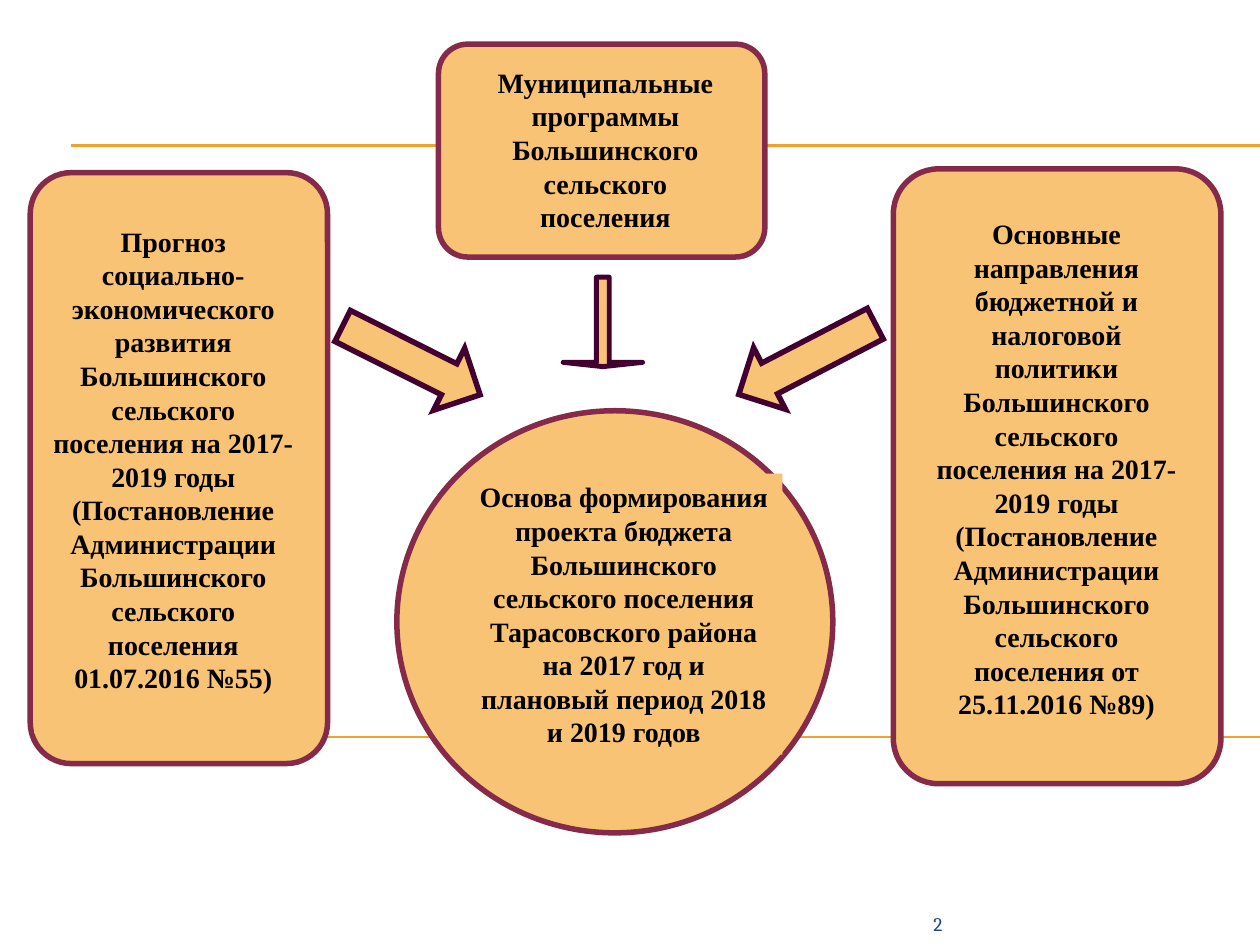
import pptx
import pptx.dml.color
import pptx.enum.shapes
import pptx.enum.text
import pptx.oxml.ns
import pptx.util
from lxml import etree

Inches, Pt = pptx.util.Inches, pptx.util.Pt
KIND = pptx.enum.shapes.MSO_SHAPE
ALIGN = pptx.enum.text.PP_ALIGN
ANCHOR = pptx.enum.text.MSO_ANCHOR

SAND, PLUM, DARK_PLUM, GOLD = "F8C374", "862A4A", "420031", "F0A22E"

# Content: frame kind, frame box, text box (left, top, width, height), paragraphs
BUDGET_BASIS = (KIND.OVAL, (3.15, 3.26, 3.46, 3.35), (3.69, 3.76, 2.52, 2.23), [
    "Основа формирования",
    "проекта бюджета Большинского сельского поселения",
    "Тарасовского района на 2017 год и плановый период 2018 и 2019 годов",
])
FORECAST = (KIND.ROUNDED_RECTANGLE, (0.24, 1.37, 2.36, 4.69), (0.27, 1.73, 2.21, 4.09), [
    "Прогноз",
    "социально-",
    "экономического",
    "развития",
    "Большинского сельского поселения на 2017-2019 годы",
    "(Постановление Администрации Большинского сельского поселения 01.07.2016 №55)",
])
PROGRAMMES = (KIND.ROUNDED_RECTANGLE, (3.48, 0.35, 2.59, 1.69), (3.7, 0.47, 2.21, 1.43), [
    "Муниципальные программы Большинского сельского поселения",
])
POLICY = (KIND.ROUNDED_RECTANGLE, (7.09, 1.34, 2.6, 4.88), (7.32, 1.67, 2.13, 4.08), [
    "Основные направления бюджетной и налоговой политики Большинского "
    "сельского поселения на 2017-2019 годы (Постановление Администрации "
    "Большинского сельского поселения от 25.11.2016 №89)",
])
# Arrows: box, rotation, adjustments, line width, sharp corners
ARROWS = [
    ((6.13, 2.24, 0.55, 1.22), 62.6, (0.5, 0.5), 3.15, True),
    ((2.99, 2.25, 0.55, 1.22), 296.6, (0.5, 0.5), 3.15, True),
    ((4.47, 2.2, 0.63, 0.71), 0, (0.162, 0.054), 2.83, False),
]
RULE_HEIGHTS = [1.15, 1.16, 5.85]
PAGE_NUMBER = "2"


def color(value):
    return pptx.dml.color.RGBColor.from_string(value)


def add_block(slide, kind, box, line=None, width=0):
    block = slide.shapes.add_shape(kind, *map(Inches, box))
    block.shadow.inherit = False
    block.fill.solid()
    block.fill.fore_color.rgb = color(SAND)
    if line:
        block.line.color.rgb = color(line)
        block.line.width = Pt(width)
    else:
        block.line.fill.background()
    return block


def write(frame, paragraphs, font, size, ink, align, bold=False):
    frame.word_wrap = True
    frame.text = "\n".join(paragraphs)
    for paragraph in frame.paragraphs:
        paragraph.alignment = align
        for run in paragraph.runs:
            run.font.name = font
            run.font.size = Pt(size)
            run.font.bold = bold
            run.font.color.rgb = color(ink)


def add_panel(slide, kind, frame_box, text_box, paragraphs):
    panel = add_block(slide, kind, frame_box, PLUM, 3.15)
    if kind == KIND.ROUNDED_RECTANGLE:
        panel.adjustments[0] = 0.138
    label = add_block(slide, KIND.RECTANGLE, text_box)
    label.text_frame.vertical_anchor = ANCHOR.TOP
    write(label.text_frame, paragraphs, "Times New Roman", 16, "000000",
          ALIGN.CENTER, bold=True)


def main():
    deck = pptx.Presentation()
    deck.slide_width, deck.slide_height = Inches(10), Inches(7.5)
    slide = deck.slides.add_slide(deck.slide_layouts[6])

    # Background rules
    for y in RULE_HEIGHTS:
        rule = slide.shapes.add_connector(
            pptx.enum.shapes.MSO_CONNECTOR.STRAIGHT,
            Inches(0.56), Inches(y), Inches(10), Inches(y))
        rule.line.color.rgb = color(GOLD)
        rule.line.width = Pt(0.75)
        etree.SubElement(rule._element.spPr, pptx.oxml.ns.qn("a:effectLst"))

    # Page number
    number = slide.shapes.add_textbox(*map(Inches, (6.84, 7.17, 0.64, 0.25))).text_frame
    number.margin_left = number.margin_right = 0
    number.margin_top = number.margin_bottom = 0
    number.vertical_anchor = ANCHOR.BOTTOM
    write(number, [PAGE_NUMBER], "Cambria", 11, "1F497D", ALIGN.RIGHT)

    # Result and its three sources
    for panel in (BUDGET_BASIS, FORECAST, PROGRAMMES, POLICY):
        add_panel(slide, *panel)

    # Arrows from the sources to the result
    for box, rotation, adjustments, width, sharp in ARROWS:
        arrow = add_block(slide, KIND.DOWN_ARROW, box, DARK_PLUM, width)
        arrow.rotation = rotation
        for index, value in enumerate(adjustments):
            arrow.adjustments[index] = value
        if sharp:
            outline = arrow._element.spPr.find(pptx.oxml.ns.qn("a:ln"))
            etree.SubElement(outline, pptx.oxml.ns.qn("a:miter"), lim="800000")

    deck.save("out.pptx")


if __name__ == "__main__":
    main()
